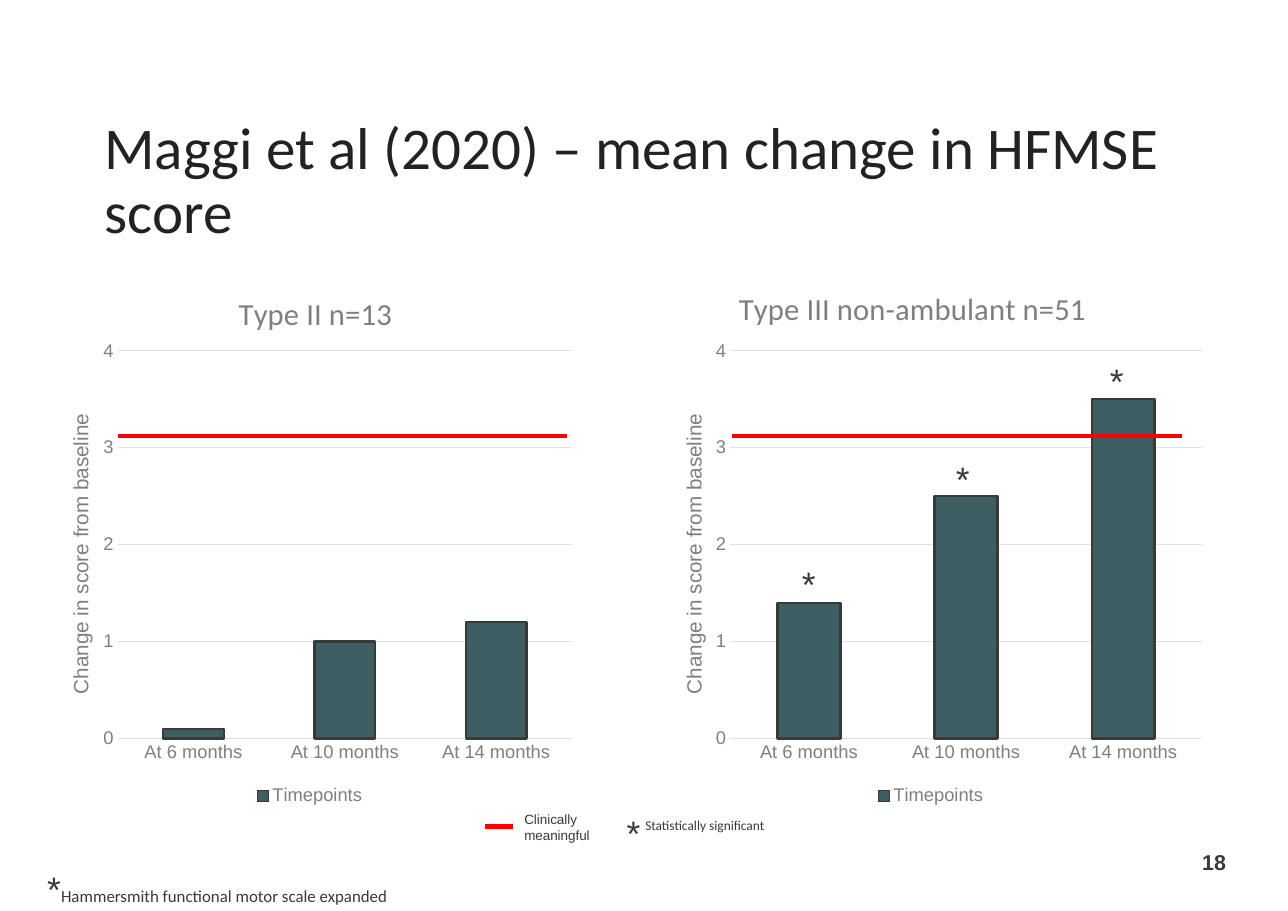
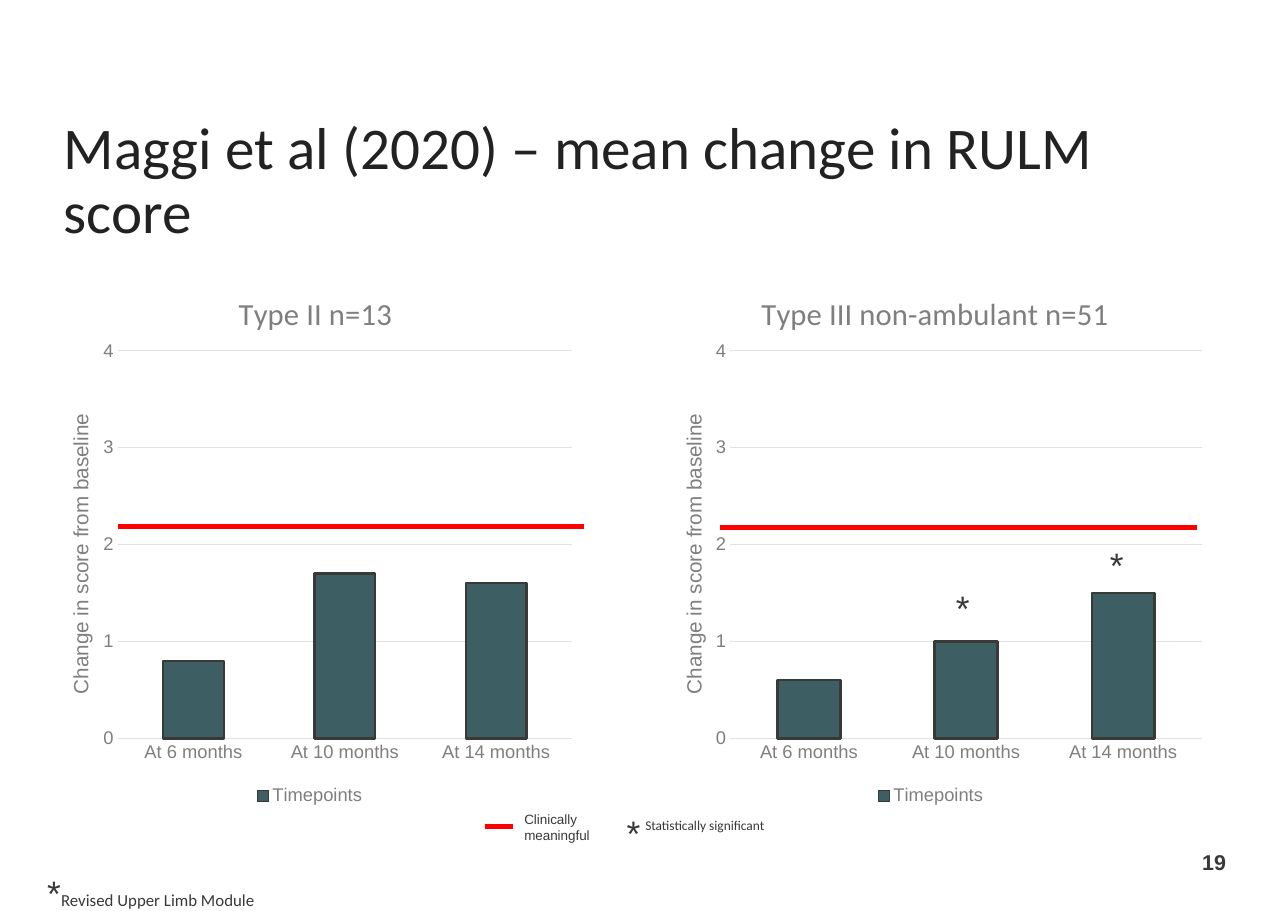
import pptx
import pptx.util
import pptx.chart.data
import pptx.dml.color
import pptx.enum.chart
import pptx.enum.shapes
import pptx.enum.text
import pptx.oxml
import pptx.oxml.ns

Cm, Pt = pptx.util.Cm, pptx.util.Pt
qn = pptx.oxml.ns.qn
ALIGN = pptx.enum.text.PP_ALIGN
ANCHOR = pptx.enum.text.MSO_ANCHOR

# Theme: colours and text styles
COLOURS = {"threshold": "FF0000", "bar": "3D5E62", "ink": "393938", "grid": "E1E1E1"}
STYLES = {
    "title": {"name": "Calibri", "size": 38.6, "color": "222222"},
    "chart title": {"name": "Calibri", "size": 20, "color": "7F7F7D", "bold": False},
    "axis title": {"name": "Arial", "size": 13.5, "color": "7F7F7D", "bold": False},
    "axis": {"name": "Arial", "size": 12, "color": "7F7F7D"},
    "chart": {"name": "Arial", "size": 10, "color": "393938"},
    "star": {"name": "Arial", "size": 23.1, "color": "393938"},
    "key": {"name": "Arial", "size": 8.8, "color": "393938"},
    "star key": {"name": "Calibri", "size": 8.8, "color": "393938"},
    "footnote": {"name": "Calibri", "size": 11, "color": "393938"},
    "page": {"name": "Arial", "size": 14, "color": "393938", "bold": True},
}

# Content: lengths in cm, thresholds in score points
TIMEPOINTS = ["At 6 months", "At 10 months", "At 14 months"]
SERIES = "Timepoints"
AXIS_TITLE = "Change in score from baseline"
SLIDES = [
    {
        "title": "Maggi et al (2020) – mean change in HFMSE score",
        "title_left": 2.41, "title_width": 25.43,
        "footnote": "Hammersmith functional motor scale expanded",
        "footnote_top": 19.86, "page": "18",
        "charts": [
            {"title": "Type II n=13", "title_at": (0.36, 0.04),
             "scores": [0.1, 1, 1.2], "threshold": 3.11, "span": (2.72, 13.08)},
            {"title": "Type III non-ambulant n=51", "title_at": (0.15, 0.03),
             "scores": [1.4, 2.5, 3.5], "threshold": 3.11, "span": (16.89, 27.25)},
        ],
        "star_tops": {0: 12.83, 1: 10.41, 2: 8.15},
    },
    {
        "title": "Maggi et al (2020) – mean change in RULM score",
        "title_left": 1.47, "title_width": 26.97,
        "footnote": "Revised Upper Limb Module",
        "footnote_top": 19.96, "page": "19",
        "charts": [
            {"title": "Type II n=13", "title_at": (0.36, 0.04),
             "scores": [0.8, 1.7, 1.6], "threshold": 2.18, "span": (2.72, 13.46)},
            {"title": "Type III non-ambulant n=51", "title_at": (0.19, 0.04),
             "scores": [0.6, 1, 1.5], "threshold": 2.17, "span": (16.61, 27.61)},
        ],
        "star_tops": {1: 13.39, 2: 12.4},
    },
]

# Shared geometry in cm; plot areas as fractions of their chart
CHART_TOP, CHART_HEIGHT = 6.1, 12.57
CHART_COLUMNS = [
    {"left": 0.84, "width": 12.6, "plot": (0.149, 0.158, 0.831, 0.711)},
    {"left": 14.96, "width": 13.0, "plot": (0.145, 0.158, 0.836, 0.711)},
]
AXIS_TITLE_AT = (0.05, 0.267)
ZERO_LEVEL, POINT_HEIGHT = 17.02, 2.24
STAR_CENTRE, STAR_STEP, STAR_WIDTH, STAR_HEIGHT = 18.65, 3.55, 1.1, 1.24


def rgb(value):
    return pptx.dml.color.RGBColor.from_string(value)


def style_font(font, style):
    for attribute, value in STYLES[style].items():
        if attribute == "color":
            font.color.rgb = rgb(value)
        else:
            setattr(font, attribute, Pt(value) if attribute == "size" else value)


def style_line(line, colour, width):
    line.color.rgb = rgb(COLOURS[colour])
    line.width = Pt(width)


def add_text(slide, box, runs, align=ALIGN.LEFT, spacing=None, **frame_format):
    frame = slide.shapes.add_textbox(*map(Cm, box)).text_frame
    for attribute, value in {"word_wrap": True, **frame_format}.items():
        setattr(frame, attribute, value)
    paragraph = frame.paragraphs[0]
    paragraph.alignment = align
    paragraph.line_spacing = spacing
    for words, style in runs:
        run = paragraph.add_run()
        run.text = words
        style_font(run.font, style)


def add_threshold(slide, start, end, level):
    line = slide.shapes.add_connector(
        pptx.enum.shapes.MSO_CONNECTOR.STRAIGHT, Cm(start), Cm(level), Cm(end), Cm(level))
    style_line(line.line, "threshold", 3)
    line._element.spPr.append(pptx.oxml.parse_xml(
        f'<a:effectLst {pptx.oxml.ns.nsdecls("a")}/>'))


def place(element, fractions, inner=False):
    """Give a chart part a fixed place, in fractions of the chart."""
    for old in element.findall(qn("c:layout")):
        element.remove(old)
    names = ("x", "y", "w", "h")[:len(fractions)]
    target = '<c:layoutTarget val="inner"/>' if inner else ""
    modes = "".join(f'<c:{name}Mode val="edge"/>' for name in names[:2])
    values = "".join(f'<c:{name} val="{value}"/>' for name, value in zip(names, fractions))
    layout = pptx.oxml.parse_xml(
        f'<c:layout {pptx.oxml.ns.nsdecls("c")}><c:manualLayout>'
        f'{target}{modes}{values}</c:manualLayout></c:layout>')
    element.insert(0 if element.find(qn("c:tx")) is None else 1, layout)


def set_title(title, words, style, position):
    frame = title.text_frame
    frame.text = words
    style_font(frame.paragraphs[0].runs[0].font, style)
    place(title._element, position)
    return frame


def add_score_chart(slide, column, content):
    data = pptx.chart.data.CategoryChartData()
    data.categories = TIMEPOINTS
    data.add_series(SERIES, content["scores"])
    chart = slide.shapes.add_chart(
        pptx.enum.chart.XL_CHART_TYPE.COLUMN_STACKED, Cm(column["left"]), Cm(CHART_TOP),
        Cm(column["width"]), Cm(CHART_HEIGHT), data).chart
    style_font(chart.font, "chart")
    chart.has_title = True
    set_title(chart.chart_title, content["title"], "chart title", content["title_at"])

    # Bars
    plot = chart.plots[0]
    for attribute, value in {"gap_width": 150, "overlap": 100,
                             "vary_by_categories": False}.items():
        setattr(plot, attribute, value)
    bars = plot.series[0].format
    bars.fill.solid()
    bars.fill.fore_color.rgb = rgb(COLOURS["bar"])
    style_line(bars.line, "ink", 1.5)
    place(chart._chartSpace.chart.plotArea, column["plot"], inner=True)

    # Axes
    scores = chart.value_axis
    for axis in (chart.category_axis, scores):
        axis.major_tick_mark = pptx.enum.chart.XL_TICK_MARK.NONE
        style_font(axis.tick_labels.font, "axis")
    style_line(chart.category_axis.format.line, "grid", 0.75)
    for attribute, value in {"minimum_scale": 0, "maximum_scale": 4, "major_unit": 1,
                             "has_major_gridlines": True, "has_title": True}.items():
        setattr(scores, attribute, value)
    scores.format.line.fill.background()
    style_line(scores.major_gridlines.format.line, "grid", 0.75)
    scores.tick_labels.number_format = "0"
    scores.tick_labels.number_format_is_linked = False
    frame = set_title(scores.axis_title, AXIS_TITLE, "axis title", AXIS_TITLE_AT)
    for attribute, value in {"rot": "-5400000", "vert": "horz"}.items():
        frame._txBody.bodyPr.set(attribute, value)

    # Legend
    chart.has_legend = True
    chart.legend.position = pptx.enum.chart.XL_LEGEND_POSITION.BOTTOM
    chart.legend.include_in_layout = False
    style_font(chart.legend.font, "axis")


def add_key(slide):
    add_threshold(slide, 11.18, 11.84, 19.05)
    add_text(slide, (11.84, 18.57, 3.1, 1.02), [("Clinically meaningful", "key")])
    add_text(slide, (14.2, 18.57, 0.89, 1.24), [("*", "star")])
    add_text(slide, (14.63, 18.72, 6.63, 0.64), [("Statistically significant", "star key")])


def build_slide(deck, content):
    slide = deck.slides.add_slide(deck.slide_layouts[6])
    add_text(slide, (content["title_left"], 2.16, content["title_width"], 3.5),
             [(content["title"], "title")], spacing=Pt(42), vertical_anchor=ANCHOR.BOTTOM,
             margin_left=0, margin_top=Cm(0.13), margin_right=0, margin_bottom=0)
    for column, chart in zip(CHART_COLUMNS, content["charts"]):
        add_score_chart(slide, column, chart)
    for chart in content["charts"]:
        add_threshold(slide, *chart["span"], ZERO_LEVEL - chart["threshold"] * POINT_HEIGHT)
    for bar, top in content["star_tops"].items():
        left = STAR_CENTRE + bar * STAR_STEP - STAR_WIDTH / 2
        add_text(slide, (left, top, STAR_WIDTH, STAR_HEIGHT), [("*", "star")], ALIGN.CENTER)
    add_key(slide)

    # Footer
    add_text(slide, (0.84, content["footnote_top"], 9.65, 1.24),
             [("*", "star"), (content["footnote"], "footnote")])
    add_text(slide, (26.87, 19.25, 1.4, 0.91), [(content["page"], "page")], ALIGN.RIGHT,
             vertical_anchor=ANCHOR.BOTTOM,
             margin_left=0, margin_top=0, margin_right=0, margin_bottom=0)


def main():
    deck = pptx.Presentation()
    deck.slide_width, deck.slide_height = Cm(29.7), Cm(21)
    for content in SLIDES:
        build_slide(deck, content)
    deck.save("out.pptx")


if __name__ == "__main__":
    main()
